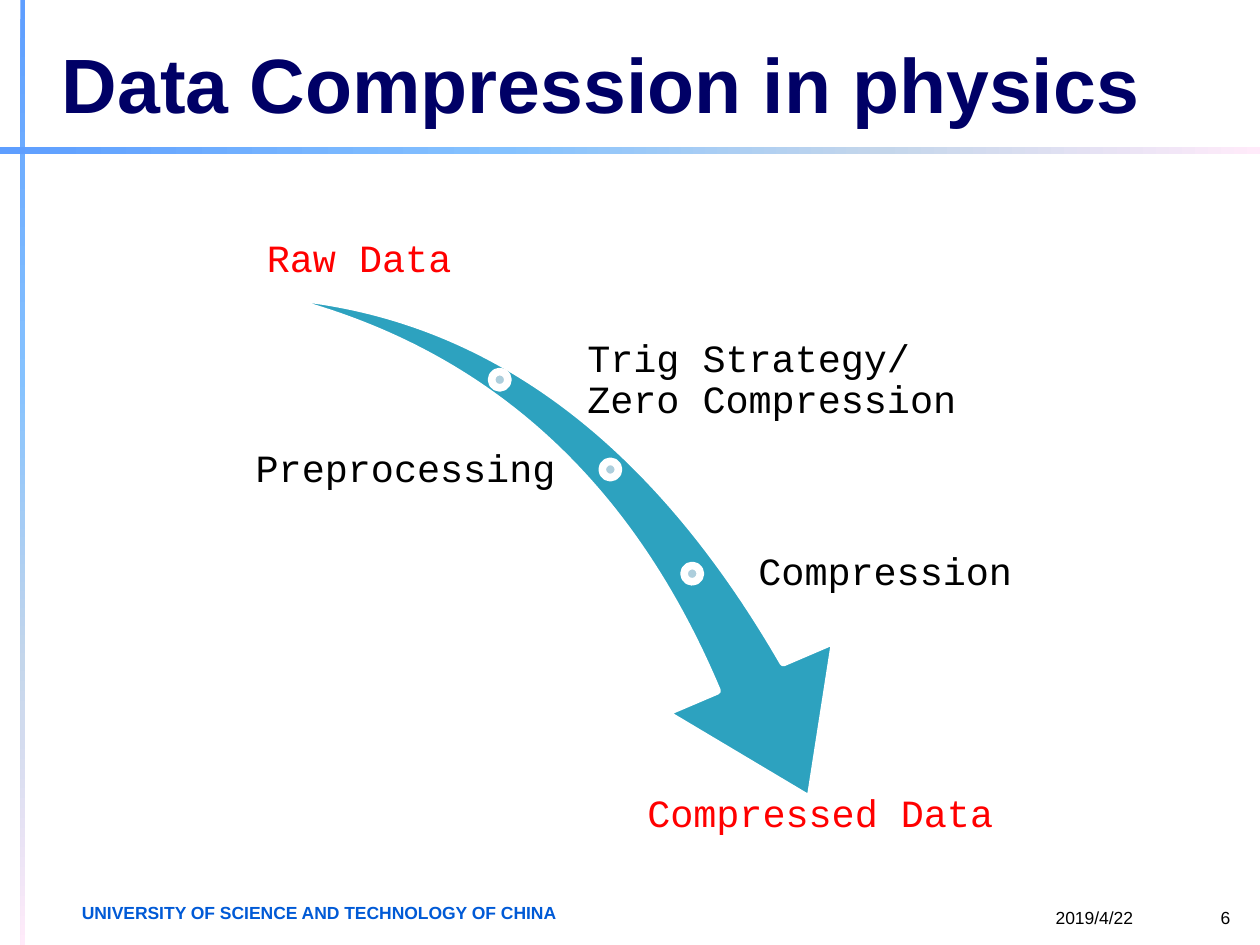
"""Build a slide that shows the stages of data compression in physics along a curved arrow."""
import copy
from dataclasses import dataclass

import pptx
import pptx.dml.color
import pptx.enum.shapes
import pptx.enum.text
import pptx.oxml.ns
import pptx.util

Cm = pptx.util.Cm
Pt = pptx.util.Pt
SHAPES = pptx.enum.shapes.MSO_SHAPE
ALIGN = pptx.enum.text.PP_ALIGN
ANCHOR = pptx.enum.text.MSO_ANCHOR

COLORS = {
    "title": "000066",
    "footer": "005AD6",
    "text": "000000",
    "data": "FF0000",
    "arrow": "2DA2BF",
    "dot": "ADCEDC",
    "outline": "FFFFFF",
}
BAR_STOPS = [(0, "5E9EFF"), (0.4, "85C2FF"), (0.7, "C4D6EB"), (1, "FFEBFA")]
OUTLINE_WIDTH = 4.33
DOT_SIZE = 0.33
LABEL_HEIGHT = 2.39


@dataclass
class Label:
    text: str
    left: float
    top: float
    width: float
    color: str = "text"
    align: ALIGN = ALIGN.LEFT
    anchor: ANCHOR = ANCHOR.MIDDLE


@dataclass
class Bar:
    left: float
    top: float
    width: float
    height: float
    angle: int


LABELS = [
    Label("Raw Data", 4.19, 3.35, 6.1, "data", ALIGN.CENTER, ANCHOR.BOTTOM),
    Label("Trig Strategy/\nZero Compression", 11.76, 6.48, 8.89),
    Label("Preprocessing", 4.19, 8.28, 7.09, align=ALIGN.RIGHT),
    Label("Compression", 15.21, 10.36, 5.44),
    Label("Compressed Data", 12.42, 15.93, 8.23, "data", ALIGN.CENTER, ANCHOR.TOP),
]
BARS = [Bar(0.41, 0, 0.1, 19.05, 90), Bar(0, 2.97, 25.4, 0.13, 0)]
DOTS = [(9.91, 7.49), (12.14, 9.3), (13.79, 11.4)]


def rgb(name: str) -> pptx.dml.color.RGBColor:
    """Return the named colour."""
    return pptx.dml.color.RGBColor.from_string(COLORS[name])


def write_text(box, text: str, *, size: float, color: str = "text", font: str = "Arial",
               bold: bool = False, align=ALIGN.LEFT, anchor=ANCHOR.TOP, wrap: bool = True,
               spacing: float = 1.0, inset: float | None = None) -> None:
    """Put formatted text into a box or placeholder."""
    frame = box.text_frame
    frame.word_wrap = wrap
    frame.auto_size = pptx.enum.text.MSO_AUTO_SIZE.NONE
    frame.vertical_anchor = anchor
    if inset is not None:
        frame.margin_left = frame.margin_right = Cm(inset)
        frame.margin_top = frame.margin_bottom = Cm(inset)
    para = frame.paragraphs[0]
    para.text = text
    para.alignment = align
    para.line_spacing = spacing
    for span in para.runs:
        span.font.name = font
        span.font.size = Pt(size)
        span.font.bold = bold
        span.font.color.rgb = rgb(color)


def add_box(page, left: float, top: float, width: float, height: float):
    """Add an empty text box."""
    return page.shapes.add_textbox(Cm(left), Cm(top), Cm(width), Cm(height))


def add_bar(page, bar: Bar) -> None:
    """Add a thin bar filled with the theme gradient."""
    shape = page.shapes.add_shape(
        SHAPES.RECTANGLE, Cm(bar.left), Cm(bar.top), Cm(bar.width), Cm(bar.height))
    shape.shadow.inherit = False
    shape.line.fill.background()
    shape.fill.gradient()
    shape.fill.gradient_angle = -bar.angle % 360
    stop_list = next(shape.element.iter(pptx.oxml.ns.qn("a:gsLst")))
    while len(stop_list) < len(BAR_STOPS):
        stop_list.append(copy.deepcopy(stop_list[0]))
    for stop, (position, color) in zip(shape.fill.gradient_stops, BAR_STOPS):
        stop.position = position
        stop.color.rgb = pptx.dml.color.RGBColor.from_string(color)


def add_outlined(page, kind, left: float, top: float, width: float, height: float, fill: str):
    """Add a solid shape with the thick white outline."""
    shape = page.shapes.add_shape(kind, Cm(left), Cm(top), Cm(width), Cm(height))
    shape.shadow.inherit = False
    shape.fill.solid()
    shape.fill.fore_color.rgb = rgb(fill)
    shape.line.color.rgb = rgb("outline")
    shape.line.width = Pt(OUTLINE_WIDTH)
    return shape


def add_label(page, label: Label) -> None:
    """Add the text of one stage."""
    box = add_box(page, label.left, label.top, label.width, LABEL_HEIGHT)
    write_text(box, label.text, size=22, color=label.color, font="Courier New",
               align=label.align, anchor=label.anchor, spacing=0.9, inset=0.08)


def main() -> None:
    """Build and save the deck."""
    deck = pptx.Presentation()
    deck.slide_width, deck.slide_height = Cm(25.4), Cm(19.05)
    page = deck.slides.add_slide(deck.slide_layouts.get_by_name("Title Only"))

    for bar in BARS:
        add_bar(page, bar)

    title = page.shapes.title
    title.left, title.top, title.width, title.height = Cm(0.99), Cm(0.56), Cm(22.86), Cm(2.21)
    write_text(title, "Data Compression in physics", size=44, color="title", bold=True,
               anchor=ANCHOR.MIDDLE)

    write_text(add_box(page, 1.4, 18.06, 10.21, 0.69),
               "UNIVERSITY OF SCIENCE AND TECHNOLOGY OF CHINA",
               size=10, color="footer", bold=True, wrap=False)
    write_text(add_box(page, 21.03, 17.81, 3, 1.02), "2019/4/22", size=10, anchor=ANCHOR.BOTTOM)
    write_text(add_box(page, 24.03, 17.81, 1.02, 1.02), "6", size=10, align=ALIGN.RIGHT,
               anchor=ANCHOR.BOTTOM)

    arrow = add_outlined(page, SHAPES.SWOOSH_ARROW, 5.05, 6.32, 12.9, 9.02, "arrow")
    arrow.rotation = 73.3
    arrow.adjustments[0], arrow.adjustments[1] = 0.16, 0.31
    for left, top in DOTS:
        add_outlined(page, SHAPES.OVAL, left, top, DOT_SIZE, DOT_SIZE, "dot")
    for label in LABELS:
        add_label(page, label)

    deck.save("out.pptx")


if __name__ == "__main__":
    main()
